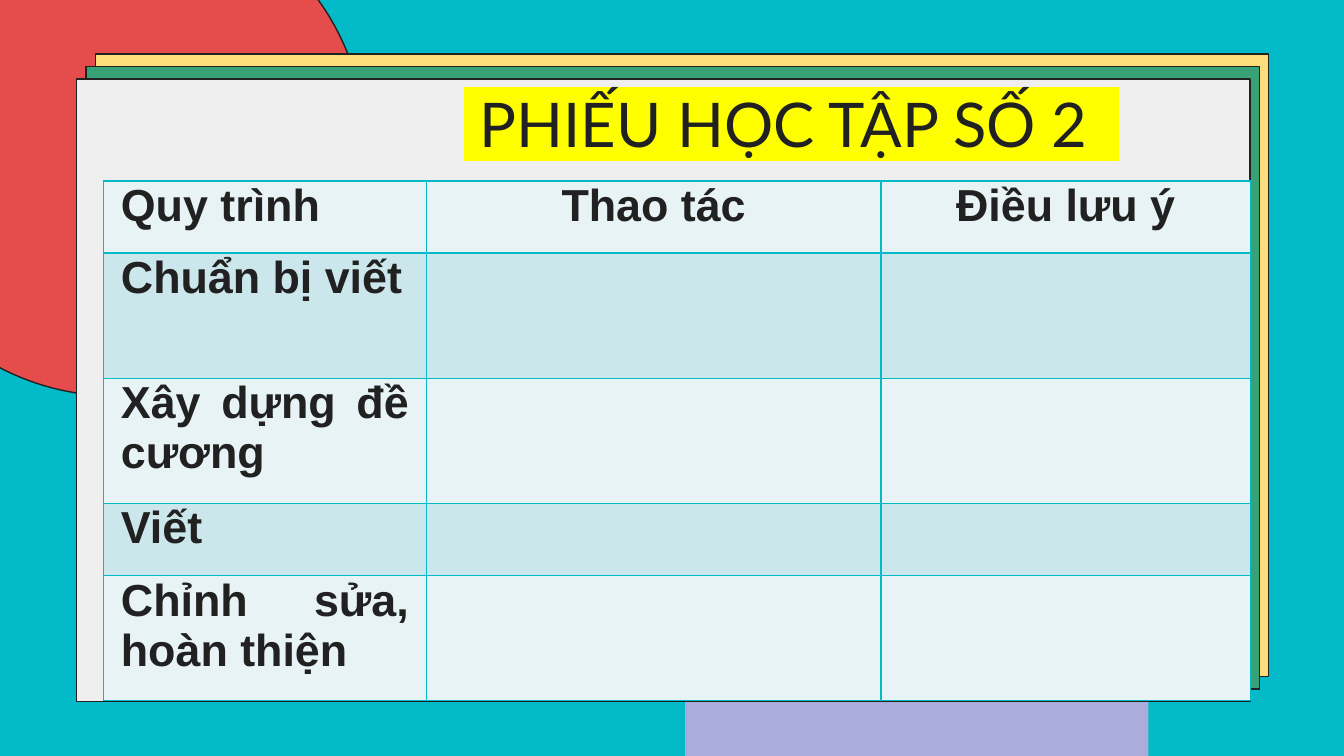
from dataclasses import dataclass

from lxml import etree
from pptx import Presentation
from pptx.dml.color import RGBColor
from pptx.enum import shapes, text
from pptx.oxml import ns
from pptx.util import Pt


@dataclass(frozen=True)
class Theme:
    background: str = "03BAC8"
    ink: str = "212121"
    red: str = "E54D4D"
    lilac: str = "AAACDC"
    yellow: str = "FEDD7A"
    green: str = "39A176"
    paper: str = "EFEFEF"
    marker: str = "FFFF00"
    bands: tuple[str, str] = ("E7F3F5", "CCE7EB")
    title_font: str = "Lato"
    table_font: str = "Arial"
    title_size: float = 33
    table_size: float = 24
    outline: float = 0.75
    border: float = 1


@dataclass(frozen=True)
class Panel:
    kind: shapes.MSO_SHAPE
    left: float
    top: float
    width: float
    height: float
    fill: str
    outlined: bool = True


THEME = Theme()
RECT, OVAL = shapes.MSO_SHAPE.RECTANGLE, shapes.MSO_SHAPE.OVAL
ALIGN = text.PP_ALIGN

SHEETS = [
    Panel(RECT, 51.1 - 5.05 * i, 29 + 6.7 * i, 628.6, 333.4, fill)
    for i, fill in enumerate((THEME.yellow, THEME.green, THEME.paper))
]
PANELS = [
    Panel(OVAL, -72, -55.6, 267.8, 267.8, THEME.red),
    Panel(RECT, 367, 353.5, 248.2, 51.5, THEME.lilac, outlined=False),
    *SHEETS,
]

HEADERS = ("Quy trình", "Thao tác", "Điều lưu ý")
STEPS = ("Chuẩn bị viết", "Xây dựng đề cương", "Viết", "Chỉnh sửa, hoàn thiện")
COLUMN_WIDTHS = (173, 243.5, 198)
ONE_LINE, TWO_LINES = 38.7, 67
ROW_HEIGHTS = (ONE_LINE, TWO_LINES, TWO_LINES, ONE_LINE, TWO_LINES)


def rgb(color: str) -> RGBColor:
    return RGBColor.from_string(color)


def add_panel(s, panel: Panel) -> None:
    sp = s.shapes.add_shape(panel.kind, Pt(panel.left), Pt(panel.top),
                            Pt(panel.width), Pt(panel.height))
    sp.shadow.inherit = False
    sp.fill.solid()
    sp.fill.fore_color.rgb = rgb(panel.fill)
    if panel.outlined:
        sp.line.color.rgb = rgb(THEME.ink)
        sp.line.width = Pt(THEME.outline)
    else:
        sp.line.fill.background()


def write(tf, words: str, *, font: str, size: float, align, bold: bool = False,
          highlight: str = "", line_spacing: float = 1, space_after: float = 0) -> None:
    p = tf.paragraphs[0]
    p.alignment = align
    p.line_spacing = line_spacing
    p.space_after = Pt(space_after)
    r = p.add_run()
    r.text = words
    r.font.size = Pt(size)
    r.font.bold = bold
    r.font.color.rgb = rgb(THEME.ink)
    if highlight:
        mark = etree.SubElement(r.font._element, ns.qn("a:highlight"))
        etree.SubElement(mark, ns.qn("a:srgbClr"), val=highlight)
    r.font.name = font


def add_title(s) -> None:
    box = s.shapes.add_textbox(Pt(95), Pt(52.5), Pt(625), Pt(34))
    tf = box.text_frame
    tf.word_wrap = True
    tf.vertical_anchor = text.MSO_ANCHOR.MIDDLE
    tf.margin_left = Pt(33)
    tf.margin_right = tf.margin_top = tf.margin_bottom = 0
    write(tf, " PHIẾU HỌC TẬP SỐ 2  ", font=THEME.title_font, size=THEME.title_size,
          align=ALIGN.CENTER, highlight=THEME.marker, line_spacing=0.8)


def set_borders(cell) -> None:
    tc_pr = cell._tc.get_or_add_tcPr()
    for i, side in enumerate(("lnL", "lnR", "lnT", "lnB")):
        ln = etree.Element(ns.qn(f"a:{side}"), w=str(Pt(THEME.border)))
        fill = etree.SubElement(ln, ns.qn("a:solidFill"))
        etree.SubElement(fill, ns.qn("a:srgbClr"), val=THEME.background)
        tc_pr.insert(i, ln)


def add_worksheet(s) -> None:
    rows = [HEADERS, *((step, "", "") for step in STEPS)]
    table = s.shapes.add_table(len(rows), len(HEADERS), Pt(55.4), Pt(97),
                               Pt(sum(COLUMN_WIDTHS)), Pt(sum(ROW_HEIGHTS))).table
    for column, width in zip(table.columns, COLUMN_WIDTHS):
        column.width = Pt(width)
    for i, (row, height) in enumerate(zip(rows, ROW_HEIGHTS)):
        table.rows[i].height = Pt(height)
        for j, words in enumerate(row):
            cell = table.cell(i, j)
            cell.fill.solid()
            cell.fill.fore_color.rgb = rgb(THEME.bands[i % 2])
            set_borders(cell)
            cell.margin_left = cell.margin_right = Pt(9.4)
            cell.margin_top = cell.margin_bottom = 0
            if words:
                write(cell.text_frame, words, font=THEME.table_font,
                      size=THEME.table_size, bold=True, space_after=8,
                      align=ALIGN.CENTER if j else ALIGN.JUSTIFY)


def main() -> None:
    prs = Presentation()
    prs.slide_width, prs.slide_height = Pt(720), Pt(405)
    s = prs.slides.add_slide(prs.slide_layouts[6])
    s.background.fill.solid()
    s.background.fill.fore_color.rgb = rgb(THEME.background)
    for panel in PANELS:
        add_panel(s, panel)
    add_title(s)
    add_worksheet(s)
    prs.save("out.pptx")


if __name__ == "__main__":
    main()
